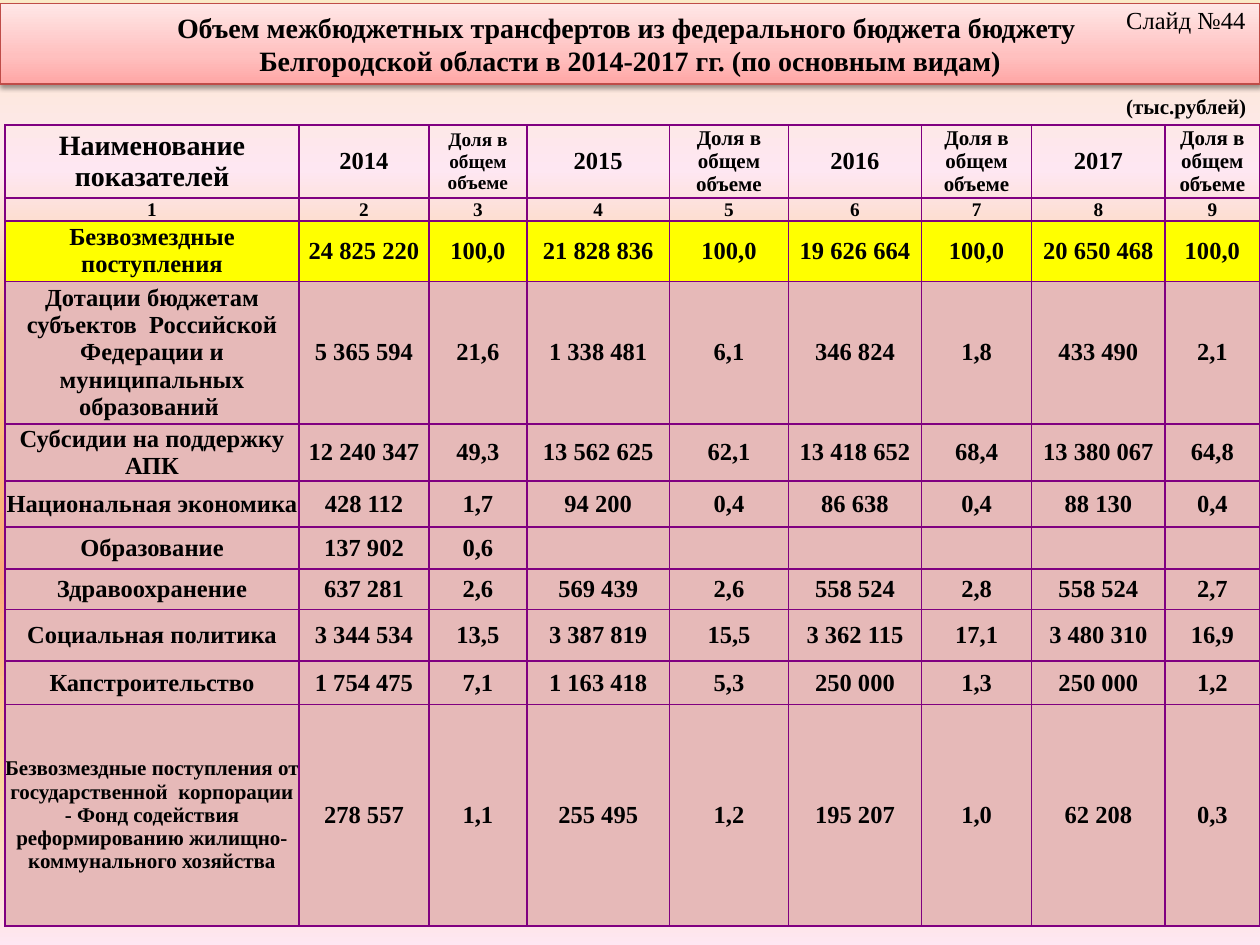
from pptx import Presentation
from pptx.dml.color import RGBColor
from pptx.enum.text import MSO_ANCHOR, MSO_AUTO_SIZE, PP_ALIGN
from pptx.oxml import parse_xml
from pptx.oxml.ns import nsdecls, qn
from pptx.util import Pt

BLACK = RGBColor(0x00, 0x00, 0x00)
PURPLE = RGBColor(0x80, 0x00, 0x80)
YELLOW = RGBColor(0xFF, 0xFF, 0x00)
ROSE = RGBColor(0xE6, 0xB9, 0xB8)
BRICK = RGBColor(0xBF, 0x4C, 0x48)
CREAM = RGBColor(0xFB, 0xEA, 0xC7)
BLUSH = RGBColor(0xFE, 0xE7, 0xF2)
APRICOT = RGBColor(0xFA, 0xC7, 0x7D)
PEACH = RGBColor(0xFB, 0xA9, 0x7D)
SAND = RGBColor(0xFB, 0xD4, 0x9C)
CORAL = RGBColor(0xFF, 0xA6, 0xA5)
SALMON = RGBColor(0xFF, 0xC0, 0xBF)
PALE_PINK = RGBColor(0xFF, 0xE7, 0xE7)

PAGE_STOPS = [(0, CREAM), (18, BLUSH), (36, APRICOT), (61, PEACH), (82, SAND), (100, BLUSH)]
TITLE_STOPS = [(0, CORAL), (35, SALMON), (100, PALE_PINK)]

TITLE = [
    "Объем межбюджетных трансфертов из федерального бюджета бюджету ",
    "Белгородской области в 2014-2017 гг. (по основным видам)",
]
SHARE = "Доля в общем объеме"
COLUMN_WIDTHS = [168, 74.25, 56, 81.5, 68, 76, 63, 76.25, 54]
ROW_HEIGHTS = [42, 13, 34.5, 81.5, 32.5, 26.5, 24, 23, 29.5, 25, 126.5]
ROWS = [
    ["Наименование показателей", "2014", SHARE, "2015", SHARE, "2016", SHARE, "2017", SHARE],
    [str(number) for number in range(1, 10)],
    ["Безвозмездные поступления", "24 825 220", "100,0", "21 828 836", "100,0",
     "19 626 664", "100,0", "20 650 468", "100,0"],
    ["Дотации бюджетам субъектов  Российской Федерации и муниципальных образований ",
     "5 365 594", "21,6", "1 338 481", "6,1", "346 824", "1,8", "433 490", "2,1"],
    ["Субсидии на поддержку АПК", "12 240 347", "49,3", "13 562 625", "62,1",
     "13 418 652", "68,4", "13 380 067", "64,8"],
    ["Национальная экономика", "428 112", "1,7", "94 200", "0,4", "86 638", "0,4", "88 130", "0,4"],
    ["Образование", "137 902", "0,6", "", "", "", "", "", ""],
    ["Здравоохранение", "637 281", "2,6", "569 439", "2,6", "558 524", "2,8", "558 524", "2,7"],
    ["Социальная политика", "3 344 534", "13,5", "3 387 819", "15,5",
     "3 362 115", "17,1", "3 480 310", "16,9"],
    ["Капстроительство", "1 754 475", "7,1", "1 163 418", "5,3", "250 000", "1,3", "250 000", "1,2"],
    ["Безвозмездные поступления от государственной  корпорации - Фонд содействия "
     "реформированию жилищно-коммунального хозяйства",
     "278 557", "1,1", "255 495", "1,2", "195 207", "1,0", "62 208", "0,3"],
]
HEADER_SIZES = [16, 14, 11, 14, 12, 14, 12, 14, 12]


def write_text(frame, lines, font="Times New Roman", size=14, bold=True, color=BLACK,
               align=PP_ALIGN.LEFT):
    for index, line in enumerate(lines):
        para = frame.paragraphs[0] if index == 0 else frame.add_paragraph()
        para.alignment = align
        para.font.size = Pt(size)
        if line:
            span = para.add_run()
            span.text = line
            span.font.name = font
            span.font.size = Pt(size)
            span.font.bold = bold
            span.font.color.rgb = color


def paint_gradient(parent, stops, angle):
    marks = "".join(
        f'<a:gs pos="{position * 1000}"><a:srgbClr val="{color}"/></a:gs>'
        for position, color in stops
    )
    gradient = parse_xml(
        f'<a:gradFill {nsdecls("a")} rotWithShape="1"><a:gsLst>{marks}</a:gsLst>'
        f'<a:lin ang="{angle * 60000}" scaled="0"/></a:gradFill>'
    )
    parent.replace(parent.find(qn("a:solidFill")), gradient)


def cell_size(row, column):
    if row == 0:
        return HEADER_SIZES[column]
    if row == 1:
        return 11
    return 12 if row == len(ROWS) - 1 and column == 0 else 14


class SlideBuilder:
    def __init__(self, page, border=PURPLE, border_width=1):
        self.page = page
        self.border = border
        self.border_width = border_width

    def background(self, stops, angle):
        fill = self.page.background.fill
        fill.solid()
        paint_gradient(self.page.element.find(".//" + qn("p:bgPr")), stops, angle)

    def title(self, lines, left, top, width, height):
        title = self.page.shapes.title
        title.left, title.top = Pt(left), Pt(top)
        title.width, title.height = Pt(width), Pt(height)
        title.fill.solid()
        properties = title.element.spPr
        paint_gradient(properties, TITLE_STOPS, 270)
        title.line.color.rgb = BRICK
        title.line.width = Pt(0.75)
        properties.append(parse_xml(
            f'<a:effectLst {nsdecls("a")}><a:outerShdw blurRad="{Pt(3.1)}" dist="{Pt(1.6)}" '
            f'dir="5400000" rotWithShape="0"><a:srgbClr val="{BLACK}">'
            '<a:alpha val="38000"/></a:srgbClr></a:outerShdw></a:effectLst>'
        ))
        frame = title.text_frame
        frame.auto_size = MSO_AUTO_SIZE.NONE
        frame.vertical_anchor = MSO_ANCHOR.MIDDLE
        write_text(frame, lines, size=16, align=PP_ALIGN.CENTER)

    def label(self, text, left, top, width, height, wrap=True, **style):
        box = self.page.shapes.add_textbox(Pt(left), Pt(top), Pt(width), Pt(height))
        box.text_frame.word_wrap = wrap
        write_text(box.text_frame, [text], **style)

    def cell(self, cell, text, size, color):
        cell.margin_left = cell.margin_right = cell.margin_top = cell.margin_bottom = 0
        cell.vertical_anchor = MSO_ANCHOR.MIDDLE
        properties = cell._tc.get_or_add_tcPr()
        for side in "LRTB":
            properties.append(parse_xml(
                f'<a:ln{side} {nsdecls("a")} w="{Pt(self.border_width)}"><a:solidFill>'
                f'<a:srgbClr val="{self.border}"/></a:solidFill></a:ln{side}>'
            ))
        if color is None:
            cell.fill.background()
        else:
            cell.fill.solid()
            cell.fill.fore_color.rgb = color
        write_text(cell.text_frame, [text], size=size, align=PP_ALIGN.CENTER)

    def table(self, rows, left, top):
        frame = self.page.shapes.add_table(
            len(rows), len(COLUMN_WIDTHS), Pt(left), Pt(top),
            Pt(sum(COLUMN_WIDTHS)), Pt(sum(ROW_HEIGHTS)))
        table = frame.table
        table.first_row = table.horz_banding = False
        for column, width in zip(table.columns, COLUMN_WIDTHS):
            column.width = Pt(width)
        for row, height in zip(table.rows, ROW_HEIGHTS):
            row.height = Pt(height)
        row_colors = [None, None, YELLOW] + [ROSE] * (len(rows) - 3)
        for row, (values, color) in enumerate(zip(rows, row_colors)):
            for column, value in enumerate(values):
                self.cell(table.cell(row, column), value, cell_size(row, column), color)


def main():
    deck = Presentation()
    deck.slide_width, deck.slide_height = Pt(720), Pt(540)
    builder = SlideBuilder(deck.slides.add_slide(deck.slide_layouts[5]))
    builder.background(PAGE_STOPS, 90)
    builder.title(TITLE, 0, 2, 720, 46)
    builder.table(ROWS, 2.88, 71.3)
    builder.label("(тыс.рублей)", 636.5, 49.7, 83.5, 21.8, wrap=False, size=12)
    builder.label("Слайд №44", 636.5, -0.7, 127.4, 24.5, bold=False)
    deck.save("out.pptx")


if __name__ == "__main__":
    main()
